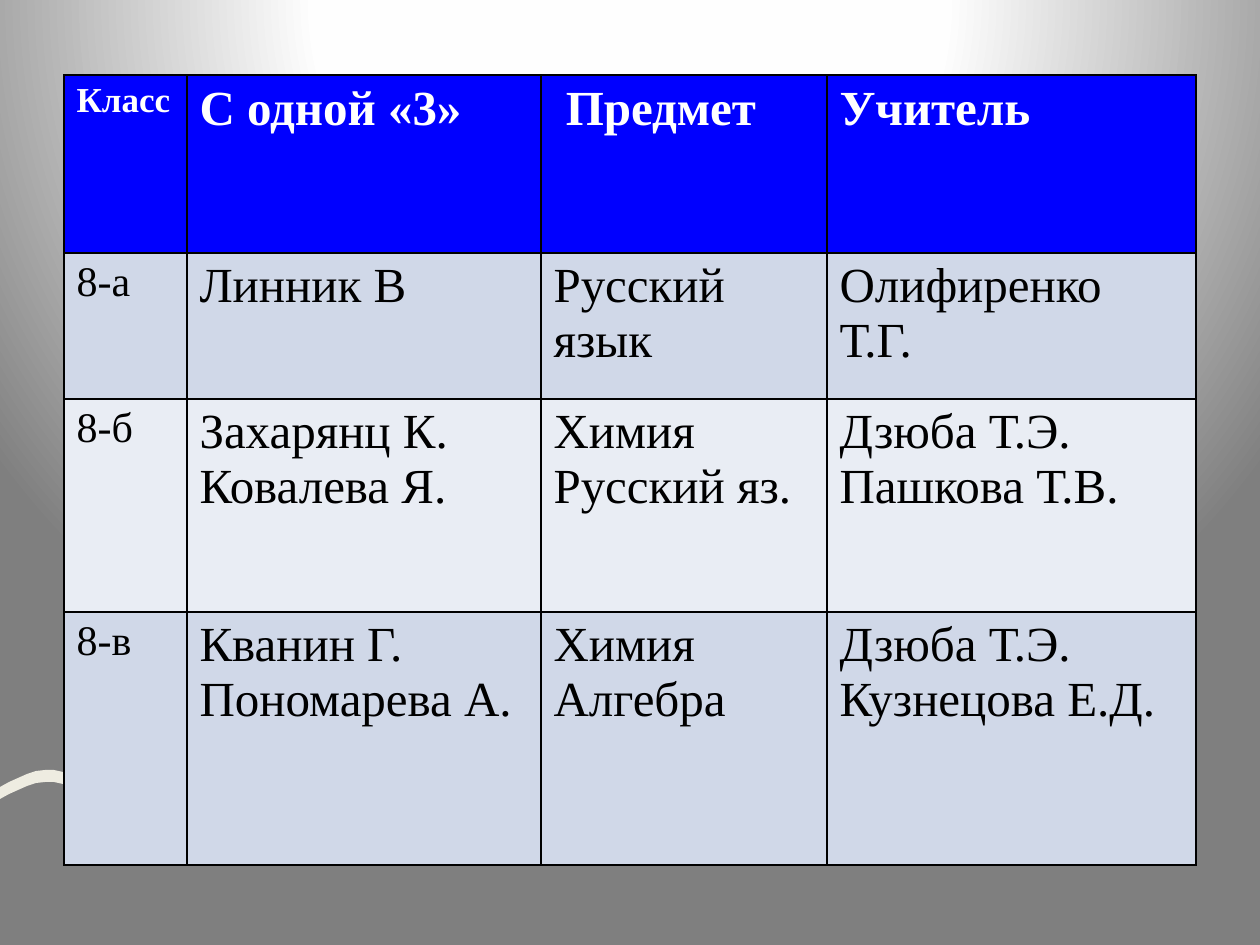
import math
from dataclasses import dataclass

import pptx
import pptx.dml.color
import pptx.oxml
import pptx.oxml.ns
import pptx.util


@dataclass
class Theme:
    font: str = "Times New Roman"
    head: str = "0000FF"
    odd: str = "D0D8E8"
    even: str = "E9EDF4"
    light: str = "FFFFFF"
    dark: str = "000000"
    wave: str = "EEECE1"
    large: int = 28
    mid: int = 24
    small: int = 20
    line: int = 1


theme = Theme()
PX = 914400 / 126
NS = pptx.oxml.ns.nsdecls("a")
rgb = pptx.dml.color.RGBColor.from_string


def px(n):
    return pptx.util.Emu(round(n * PX))


def write(frame, text, size, color, bold=False):
    """Fill a text frame, one paragraph per line of text."""
    frame.text = text
    for para in frame.paragraphs:
        for run in para.runs:
            font = run.font
            font.name = theme.font
            font.size = pptx.util.Pt(size)
            font.bold = bold
            font.color.rgb = rgb(color)


deck = pptx.Presentation()
deck.slide_width, deck.slide_height = px(1260), px(945)
slide = deck.slides.add_slide(deck.slide_layouts[6])

# Background: a round glow from above the slide
slide.background.fill.solid()
back = slide.element.find(".//" + pptx.oxml.ns.qn("p:bgPr"))
stops = "".join(
    f'<a:gs pos="{pos * 1000}"><a:srgbClr val="{color}"/></a:gs>'
    for pos, color in ((0, "FFFFFF"), (40, "FEFEFE"), (100, "7F7F7F")))
back[0] = pptx.oxml.parse_xml(
    f'<a:gradFill {NS} rotWithShape="1"><a:gsLst>{stops}</a:gsLst>'
    '<a:path path="circle"><a:fillToRect l="50000" t="-80000" '
    'r="50000" b="180000"/></a:path></a:gradFill>')

# Wavy ribbon behind the table
mid = [(x, 791 - 15 * math.cos(2 * math.pi * (x - 49) / 183))
       for x in range(0, 550, 9)]
edge = ([(x, y - 6) for x, y in mid]
        + [(x, y + 6) for x, y in reversed(mid)])
build = slide.shapes.build_freeform(*edge[0], scale=PX)
build.add_line_segments(edge[1:], close=True)
wave = build.convert_to_shape()
wave.shadow.inherit = False
wave.fill.solid()
wave.fill.fore_color.rgb = rgb(theme.wave)
wave.line.fill.background()

# Table of classes
rows = [
    ("Класс", "С одной «3»", " Предмет", "Учитель"),
    ("8-а", "Линник В", "Русский язык", "Олифиренко Т.Г."),
    ("8-б", "Захарянц К.\nКовалева Я.", "Химия\nРусский яз.",
     "Дзюба Т.Э.\nПашкова Т.В."),
    ("8-в", "Кванин Г.\nПономарева А.", "Химия\nАлгебра",
     "Дзюба Т.Э.\nКузнецова Е.Д."),
]
wide = (123, 354, 286, 369)
high = (178, 146, 213, 253)
table = slide.shapes.add_table(len(rows), len(wide), px(64), px(75),
                               px(sum(wide)), px(sum(high))).table
for col, width in zip(table.columns, wide):
    col.width = px(width)
for row, height in zip(table.rows, high):
    row.height = px(height)

for r, texts in enumerate(rows):
    top = r == 0
    fill = theme.head if top else theme.odd if r % 2 else theme.even
    for c, text in enumerate(texts):
        cell = table.cell(r, c)
        # Borders come before the fill in the cell's properties
        props = cell._tc.get_or_add_tcPr()
        for side in "LRTB":
            props.append(pptx.oxml.parse_xml(
                f'<a:ln{side} {NS} w="{theme.line * 12700}"><a:solidFill>'
                f'<a:srgbClr val="{theme.dark}"/></a:solidFill></a:ln{side}>'))
        cell.fill.solid()
        cell.fill.fore_color.rgb = rgb(fill)
        size = theme.large if c else theme.small if top else theme.mid
        write(cell.text_frame, text, size=size, bold=top,
              color=theme.light if top else theme.dark)

deck.save("out.pptx")
